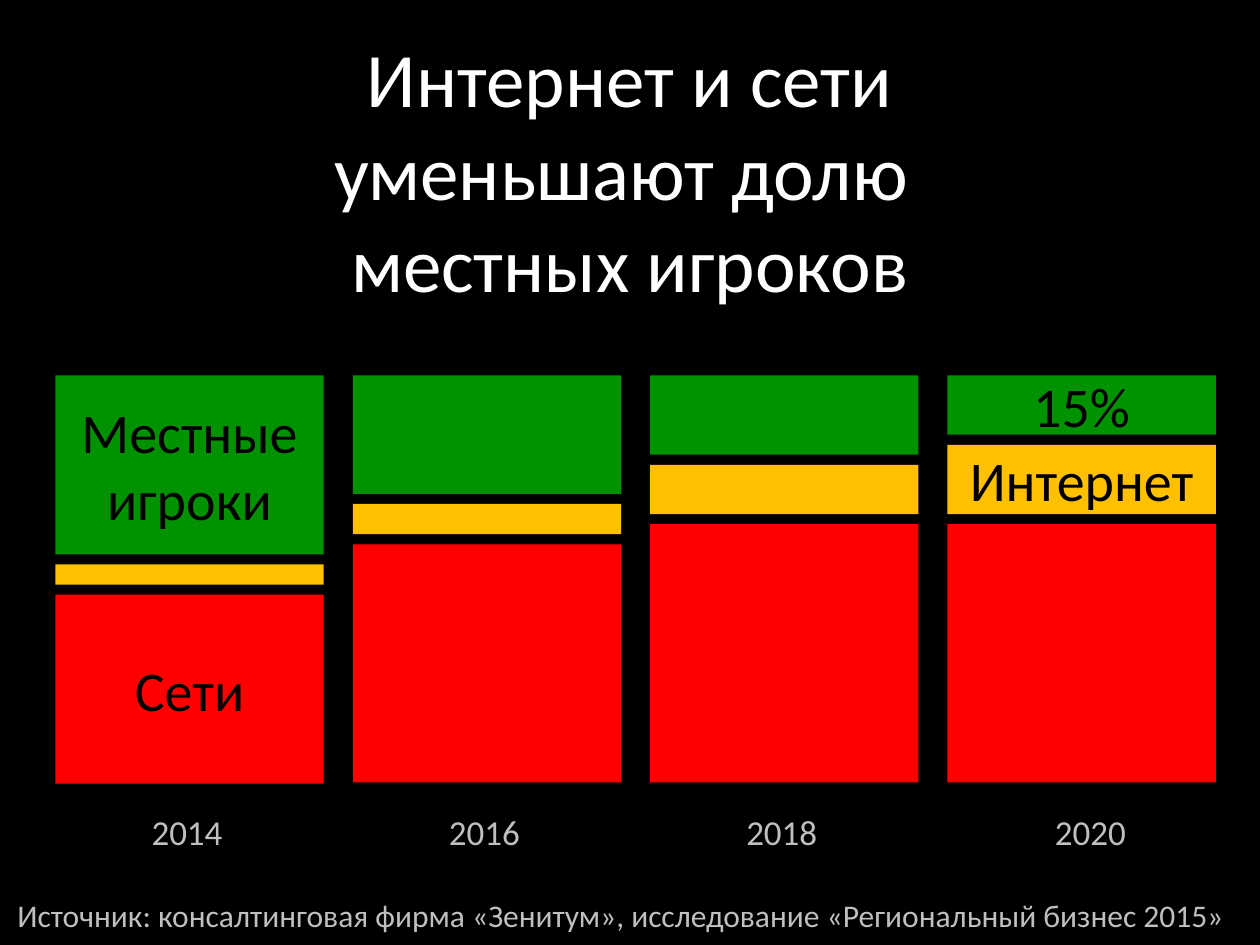
from pptx import Presentation
from pptx.dml.color import RGBColor
from pptx.enum import shapes, text
from pptx.util import Inches, Pt

GREEN, YELLOW, RED = "009200", "FFC000", "FF0000"
BLACK, WHITE, GREY = "000000", "FFFFFF", "BFBFBF"


def paint(fill, color):
    fill.solid()
    fill.fore_color.rgb = RGBColor.from_string(color)


def write(shape, wording, size, color, align=text.PP_ALIGN.CENTER,
          anchor=text.MSO_ANCHOR.MIDDLE, wrap=True):
    frame = shape.text_frame
    frame.text = wording
    frame.word_wrap = wrap
    frame.vertical_anchor = anchor
    para = frame.paragraphs[0]
    para.alignment = align
    for span in para.runs:
        for name, value in {"name": "Calibri", "size": Pt(size)}.items():
            setattr(span.font, name, value)
        paint(span.font.fill, color)


deck = Presentation()
deck.slide_width, deck.slide_height = Inches(10), Inches(7.5)
page = deck.slides.add_slide(deck.slide_layouts[5])
paint(page.background.fill, BLACK)

title = page.shapes.title
title.left, title.top = Inches(0.5), Inches(0.13)
title.width, title.height = Inches(9), Inches(2.43)
write(title, "Интернет и сети\vуменьшают долю \vместных игроков", 44, WHITE)

# Each column stacks local players, internet and chains from the top down.
first_left, chart_top, bar_width, pitch, gap = 0.44, 2.98, 2.13, 2.36, 0.08
columns = [
    ("2014", 1.10, [1.42, 0.16, 1.50], ["Местные игроки", "", "Сети"]),
    ("2016", 3.46, [0.94, 0.24, 1.89], ["", "", ""]),
    ("2018", 5.82, [0.63, 0.39, 2.05], ["", "", ""]),
    ("2020", 8.27, [0.47, 0.55, 2.05], ["15%", "Интернет", ""]),
]
for index, (year, year_left, heights, labels) in enumerate(columns):
    top = chart_top
    for height, label, color in zip(heights, labels, (GREEN, YELLOW, RED)):
        box = page.shapes.add_shape(
            shapes.MSO_SHAPE.RECTANGLE, Inches(first_left + index * pitch),
            Inches(top), Inches(bar_width), Inches(height))
        box.shadow.inherit = False
        paint(box.fill, color)
        box.line.fill.background()
        if label:
            write(box, label, 32, BLACK)
        top += height + gap

    year_box = page.shapes.add_textbox(
        Inches(year_left), Inches(6.38), Inches(0.77), Inches(0.44))
    write(year_box, year, 20, GREY, anchor=text.MSO_ANCHOR.TOP, wrap=False)

source_box = page.shapes.add_textbox(
    Inches(0.04), Inches(7.06), Inches(9.83), Inches(0.4))
write(source_box,
      "Источник: консалтинговая фирма «Зенитум», исследование «Региональный бизнес 2015»",
      18, GREY, text.PP_ALIGN.LEFT, text.MSO_ANCHOR.TOP, wrap=False)

deck.save("out.pptx")
